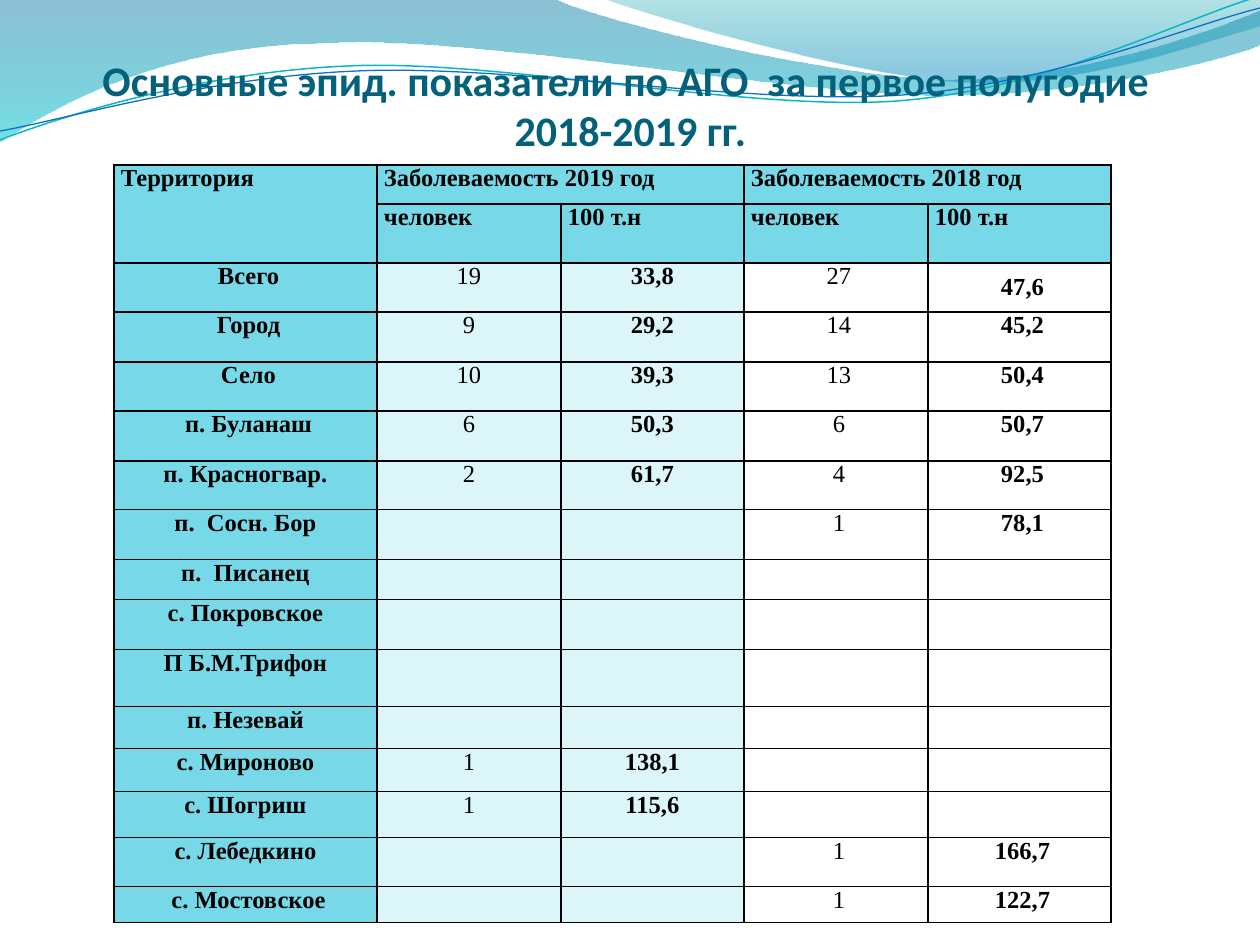
from math import cos, radians, sin

from lxml.etree import SubElement
from pptx import Presentation
from pptx.dml.color import RGBColor
from pptx.enum.text import MSO_ANCHOR as Anchor, PP_ALIGN as Align
from pptx.oxml import parse_xml
from pptx.oxml.ns import nsdecls, qn
from pptx.util import Pt

PX = 914400 / 126
COLORS = {
    "title": "04617B", "ink": "000000", "head": "77D9E8", "pale": "DBF5F9",
    "wave_top": "0074A1", "wave_end": "00C6CF",
    "crest_top": "00A1A9", "crest_end": "008BBF",
    "teal_line": "0AB8BF", "blue_line": "0F6FC6",
}

TITLE = ["Основные эпид. показатели по АГО  за первое полугодие ", "2018-2019 гг."]
TITLE_BOX = (25, 66, 1211, 89)

TABLE_AT = (114, 165)
COLUMNS = [263, 184, 183, 184, 183]
ROWS = [39, 59, 49, 50, 49, 50, 49, 50, 40, 50, 57, 42, 43, 46, 49, 36]
HEADER = [
    ["Территория", "Заболеваемость 2019 год ", "", "Заболеваемость 2018 год", ""],
    ["", "человек", "100 т.н", "человек", "100 т.н"],
]
MERGES = [((0, 0), (1, 0)), ((0, 1), (0, 2)), ((0, 3), (0, 4))]
# territory, then people and rate per 100 thousand for 2019 and for 2018
TERRITORIES = [
    [" Всего", "19", "33,8", " 27", " 47,6"],
    [" Город", "9", "29,2", " 14", " 45,2"],
    [" Село", "10", "39,3", " 13", " 50,4"],
    [" п. Буланаш", "6", "50,3", " 6", " 50,7"],
    ["п. Красногвар.", "2", "61,7", " 4", " 92,5"],
    ["п.  Сосн. Бор", "", "", " 1", " 78,1"],
    ["п.  Писанец", "", "", "", ""],
    ["с. Покровское", "", "", "", ""],
    ["П Б.М.Трифон", "", "", "", ""],
    ["п. Незевай", "", "", "", ""],
    ["с. Мироново", "1", "138,1", "", ""],
    ["с. Шогриш", "1", "115,6", "", ""],
    ["с. Лебедкино", "", "", " 1", " 166,7"],
    [" с. Мостовское", "", "", " 1", " 122,7"],
]

# outlines: one point is a straight step, three points are a Bezier step
WAVE = [
    [(0, 0)], [(554, -1)],
    [(600, 21), (837, 79), (955, 79)], [(1075, 79), (1207, 33), (1260, 11)],
    [(1261, 45)],
    [(1238, 55), (1096, 96), (940, 95)], [(784, 95), (481, 35), (324, 43)],
    [(163, 45), (58, 105), (-1, 142)],
]
CREST = [
    [(604, -1)],
    [(641, 14), (859, 78), (969, 82)], [(1079, 87), (1211, 40), (1260, 26)],
    [(1260, 0)],
]
TEAL_LINE = [
    [(0, 140)], [(60, 117), (199, 72), (349, 66)],
    [(498, 59), (747, 112), (898, 101)], [(1050, 89), (1182, 19), (1257, -3)],
]
BLUE_LINE = [
    [(0, 131)], [(59, 121), (207, 77), (357, 71)],
    [(508, 64), (752, 106), (903, 95)], [(1053, 84), (1187, 26), (1260, 8)],
]
# outline, then (colour, position, opacity in percent) of each gradient stop
FILLED = [
    (WAVE, [("wave_top", 0, 45), ("wave_end", 100, 55)]),
    (CREST, [("crest_top", 0, 30), ("crest_end", 80, 45)]),
]
STROKED = [(TEAL_LINE, "teal_line", 0.85), (BLUE_LINE, "blue_line", 0.75)]
LINE_TILT = -2.7
LINE_CENTER = (629, 73)


def emu(px):
    return round(px * PX)


def rgb(name):
    return RGBColor.from_string(COLORS[name])


def untilt(point):
    """Undo the tilt that the line's own rotation will apply."""
    angle = radians(-LINE_TILT)
    dx, dy = (value - middle for value, middle in zip(point, LINE_CENTER))
    return (LINE_CENTER[0] + dx * cos(angle) - dy * sin(angle),
            LINE_CENTER[1] + dx * sin(angle) + dy * cos(angle))


def add_outline(page, outline, close):
    points = [(emu(x), emu(y)) for step in outline for x, y in step]
    builder = page.shapes.build_freeform(*points[0], scale=1.0)
    builder.add_line_segments(points[1:], close=close)
    shape = builder.convert_to_shape()
    shape.shadow.inherit = False
    straight = iter(shape._element.xpath(".//a:lnTo"))
    for step in outline[1:]:
        first, *others = [next(straight) for _ in step]
        if others:
            first.tag = qn("a:cubicBezTo")
            for other in others:
                first.append(other[0])
                other.getparent().remove(other)
    return shape


def add_waves(page):
    for outline, stops in FILLED:
        shape = add_outline(page, outline, True)
        shape.line.fill.background()
        shape.fill.gradient()
        shape.fill.gradient_angle = 270
        for stop, (color, position, _) in zip(shape.fill.gradient_stops, stops):
            stop.color.rgb = rgb(color)
            stop.position = position / 100
        tints = shape._element.xpath("./p:spPr/a:gradFill//a:srgbClr")
        for tint, (_, _, opacity) in zip(tints, stops):
            SubElement(tint, qn("a:alpha")).set("val", str(opacity * 1000))
    for outline, color, width in STROKED:
        level = [[untilt(point) for point in step] for step in outline]
        shape = add_outline(page, level, False)
        shape.rotation = LINE_TILT
        shape.fill.background()
        shape.line.color.rgb = rgb(color)
        shape.line.width = Pt(width)


def style_span(span, font, size, color, bold):
    span.font.name = font
    span.font.size = Pt(size)
    span.font.color.rgb = rgb(color)
    span.font.bold = bold


def add_borders(cell):
    properties = cell._tc.get_or_add_tcPr()
    for index, side in enumerate("LRTB"):
        properties.insert(index, parse_xml(
            f'<a:ln{side} {nsdecls("a")} w="12700"><a:solidFill>'
            f'<a:srgbClr val="{COLORS["ink"]}"/></a:solidFill></a:ln{side}>'))


def fill_cell(cell, text, row, column):
    is_header = row < len(HEADER)
    cell.margin_left = cell.margin_right = emu(7)
    cell.margin_top = cell.margin_bottom = 0
    if is_header or column == 0:
        color = "head"
    else:
        color = "pale" if column < 3 else None
    if color:
        cell.fill.solid()
        cell.fill.fore_color.rgb = rgb(color)
    else:
        cell.fill.background()
    add_borders(cell)
    para = cell.text_frame.paragraphs[0]
    para.alignment = Align.JUSTIFY if is_header else Align.CENTER
    if text:
        para.text = text
        bold = is_header or column in (0, 2, 4)
        style_span(para.runs[0], "Times New Roman", 14, "ink", bold)
    else:
        SubElement(para._p, qn("a:endParaRPr")).set("sz", "1400")


def add_table(page):
    frame = page.shapes.add_table(len(ROWS), len(COLUMNS), *map(emu, TABLE_AT),
                                  emu(sum(COLUMNS)), emu(sum(ROWS)))
    table = frame.table
    table.first_row = table.horz_banding = False
    for column, width in zip(table.columns, COLUMNS):
        column.width = emu(width)
    for r, (height, texts) in enumerate(zip(ROWS, HEADER + TERRITORIES)):
        table.rows[r].height = emu(height)
        for c, text in enumerate(texts):
            fill_cell(table.cell(r, c), text, r, c)
    for first, last in MERGES:
        table.cell(*first).merge(table.cell(*last))
    table.cell(len(HEADER), 4).vertical_anchor = Anchor.MIDDLE


def add_title(page):
    frame = page.shapes.add_textbox(*map(emu, TITLE_BOX)).text_frame
    frame.word_wrap = True
    frame.vertical_anchor = Anchor.BOTTOM
    frame.margin_left = frame.margin_right = frame.margin_bottom = 0
    frame.margin_top = emu(6)
    frame.text = "\n".join(TITLE)
    for para in frame.paragraphs:
        para.alignment = Align.CENTER
        style_span(para.runs[0], "Calibri", 24, "title", True)


def main():
    deck = Presentation()
    deck.slide_width, deck.slide_height = emu(1260), emu(945)
    page = deck.slides.add_slide(deck.slide_layouts[6])
    add_waves(page)
    add_table(page)
    add_title(page)
    deck.save("out.pptx")


if __name__ == "__main__":
    main()
